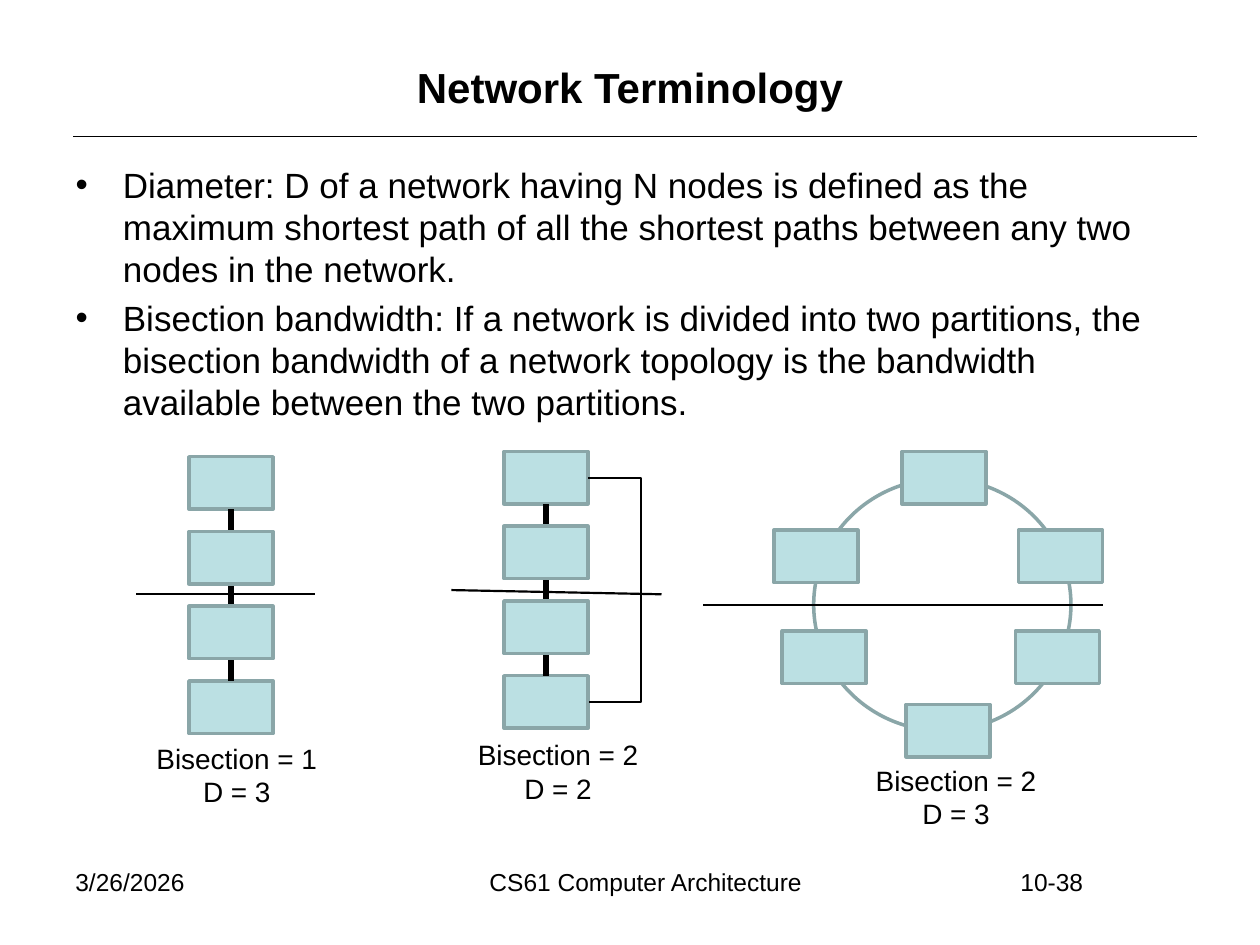
from pptx import Presentation
from pptx.dml.color import RGBColor
from pptx.enum.shapes import MSO_CONNECTOR as Link, MSO_SHAPE as Shape
from pptx.enum.text import MSO_ANCHOR as Anchor, MSO_AUTO_SIZE as AutoSize, PP_ALIGN as Align
from pptx.oxml.ns import qn
from pptx.util import Inches, Pt

COLUMNS, ROWS = 120, 90  # grid over the slide
WIDTH, HEIGHT = Inches(10), Inches(7.5)
BLACK, NODE_FILL, NODE_LINE = "000000", "BBE0E3", "8AA6A8"
NODE_WIDTH, NODE_HEIGHT = 8, 5
CHAIN_LENGTH, CHAIN_STEP = 4, 7.12
TOP, BOTTOM = 0, 2  # connection sites

RING_NODES = [(85.9, 43), (73.7, 50.5), (97, 50.5),
              (96.7, 60.1), (74.5, 60.1), (86.3, 67.1)]
DEFINITIONS = [
    "Diameter: D of a network having N nodes is defined as the maximum shortest "
    "path of all the shortest paths between any two nodes in the network.",
    "Bisection bandwidth: If a network is divided into two partitions, the "
    "bisection bandwidth of a network topology is the bandwidth available "
    "between the two partitions.",
]


def color(value):
    return RGBColor.from_string(value)


def x(column):
    return round(WIDTH * column / COLUMNS)


def y(row):
    return round(HEIGHT * row / ROWS)


def area(left, top, width, height):
    return x(left), y(top), x(width), y(height)


def write(box, lines, size, align=Align.LEFT, bold=False, gap=0):
    """Fill a text frame with one formatted paragraph per line."""
    frame = box.text_frame
    frame.text = "\n".join(lines)
    font_format = {"name": "Arial", "size": Pt(size), "bold": bold}
    for index, para in enumerate(frame.paragraphs):
        para.alignment = align
        para.space_before = Pt(gap if index else 0)
        for span in para.runs:
            for name, value in font_format.items():
                setattr(span.font, name, value)
            span.font.color.rgb = color(BLACK)


def fill_placeholder(box, place, lines, **text_format):
    box.left, box.top, box.width, box.height = area(*place)
    write(box, lines, **text_format)
    box.text_frame.auto_size = AutoSize.NONE


def add_label(page, place, lines, size, align=Align.LEFT, wrap=True):
    box = page.shapes.add_textbox(*area(*place))
    box.text_frame.word_wrap = wrap
    box.text_frame.vertical_anchor = Anchor.TOP
    write(box, lines, size, align)


def add_figure(page, kind, place, fill=None):
    figure = page.shapes.add_shape(kind, *area(*place))
    figure.shadow.inherit = False
    if fill:
        figure.fill.solid()
        figure.fill.fore_color.rgb = color(fill)
    else:
        figure.fill.background()
    figure.line.color.rgb = color(NODE_LINE)
    figure.line.width = Pt(2)
    return figure


def add_node(page, left, top):
    return add_figure(page, Shape.RECTANGLE, (left, top, NODE_WIDTH, NODE_HEIGHT), NODE_FILL)


def add_line(page, start, end, weight=1.25, kind=Link.STRAIGHT):
    line = page.shapes.add_connector(kind, x(start[0]), y(start[1]), x(end[0]), y(end[1]))
    line.line.color.rgb = color(BLACK)
    line.line.width = Pt(weight)
    properties = line._element.spPr
    properties.append(properties.makeelement(qn("a:effectLst"), {}))
    return line


def add_chain(page, left, top):
    """Stack nodes on one thick link that runs behind the inner ones."""
    tops = [top + CHAIN_STEP * index for index in range(CHAIN_LENGTH)]
    first, last = (add_node(page, left, row) for row in (tops[0], tops[-1]))
    middle = left + NODE_WIDTH / 2
    link = add_line(page, (middle, tops[0] + NODE_HEIGHT), (middle, tops[-1]), 3.5)
    link.begin_connect(first, BOTTOM)
    link.end_connect(last, TOP)
    for row in tops[1:-1]:
        add_node(page, left, row)


def add_loop(page, left, top):
    """Bent link around the right side of a chain."""
    side, center = left + NODE_WIDTH, top + NODE_HEIGHT / 2
    width, reach = 0.12, 5.1
    end = (side + width, center + CHAIN_STEP * (CHAIN_LENGTH - 1))
    loop = add_line(page, (side, center), end, kind=Link.ELBOW)
    geometry = loop._element.spPr.find(qn("a:prstGeom"))
    guides = geometry.find(qn("a:avLst"))
    if guides is None:
        guides = geometry.makeelement(qn("a:avLst"), {})
        geometry.append(guides)
    bend = round(reach / width * 100000)
    guides.append(guides.makeelement(qn("a:gd"), {"name": "adj1", "fmla": f"val {bend}"}))


def add_ring(page):
    add_figure(page, Shape.OVAL, (77.5, 45.6, 24.5, 24))
    for left, top in RING_NODES:
        add_node(page, left, top)


def add_measures(page, left, top, bisection, diameter):
    lines = [f"Bisection = {bisection}", f"D = {diameter}"]
    add_label(page, (left, top, 17.9, 7.7), lines, 16, Align.CENTER, wrap=False)


def main():
    deck = Presentation()
    deck.slide_width, deck.slide_height = WIDTH, HEIGHT
    page = deck.slides.add_slide(deck.slide_layouts[1])

    # Title, rule and definitions
    title, body = page.placeholders
    fill_placeholder(title, (6, 3.6, 108, 9.4), ["Network Terminology"],
                     size=24, align=Align.CENTER, bold=True)
    fill_placeholder(body, (6, 15, 108, 66.4), DEFINITIONS, size=20, gap=4)
    add_line(page, (7, 13), (114, 13), 0.75)

    # Linear network
    add_chain(page, 18, 43.5)
    add_line(page, (13, 56.6), (30, 56.6))
    add_measures(page, 13.6, 70, 1, 3)

    # Chain closed by a loop
    add_chain(page, 48, 43)
    add_loop(page, 48, 43)
    add_line(page, (43, 56.2), (63, 56.6))
    add_measures(page, 44.2, 69.7, 2, 2)

    # Ring network
    add_ring(page)
    add_line(page, (67, 57.6), (105, 57.6))
    add_measures(page, 82.1, 72.1, 2, 3)

    # Footer
    for left, width, text, align in [(6, 18, "3/26/2026", Align.LEFT),
                                     (30, 63, "CS61 Computer Architecture", Align.CENTER),
                                     (96, 9, "10-38", Align.LEFT)]:
        add_label(page, (left, 82, width, 6.2), [text], 14, align)

    deck.save("out.pptx")


if __name__ == "__main__":
    main()
